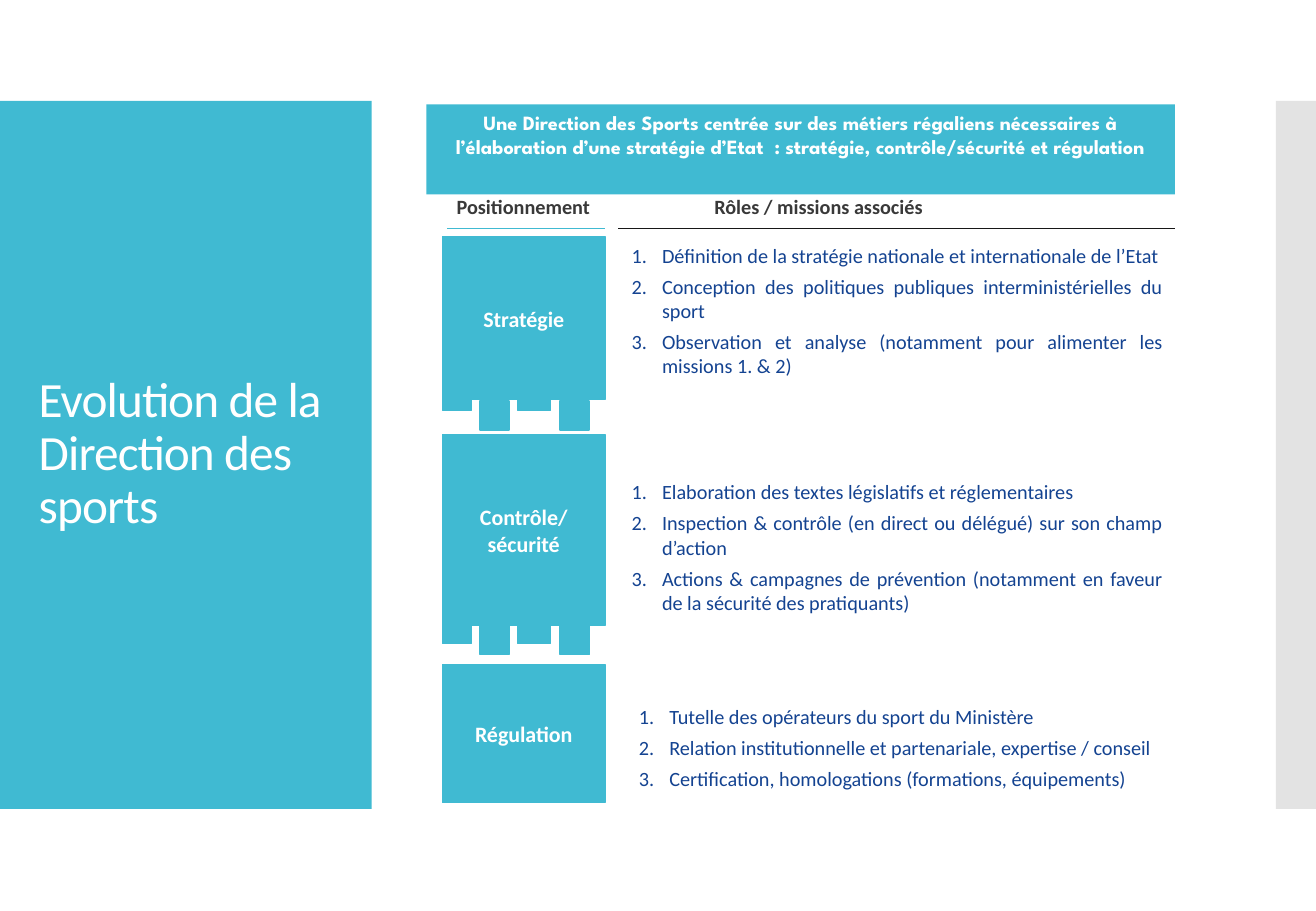
from dataclasses import dataclass

import pptx
import pptx.dml.color
import pptx.enum.shapes
import pptx.enum.text
import pptx.oxml.ns
import pptx.util
from lxml import etree

Inches = pptx.util.Inches
Pt = pptx.util.Pt
RGB = pptx.dml.color.RGBColor
ALIGN = pptx.enum.text.PP_ALIGN
ANCHOR = pptx.enum.text.MSO_ANCHOR
RECT = pptx.enum.shapes.MSO_SHAPE.RECTANGLE
STRAIGHT = pptx.enum.shapes.MSO_CONNECTOR.STRAIGHT
qn = pptx.oxml.ns.qn

TEAL = RGB(0x40, 0xBA, 0xD2)
GREY = RGB(0xC8, 0xC8, 0xC8)
WHITE = RGB(0xFF, 0xFF, 0xFF)
BLACK = RGB(0x17, 0x17, 0x17)
DARK = RGB(0x39, 0x39, 0x39)
NAVY = RGB(0x14, 0x43, 0x91)

BOX_X = 3.64
BOX_W = 1.34
RULE_Y = 1.88


@dataclass
class Role:
    name: str
    top: float
    height: float
    list_x: float
    list_y: float
    list_h: float
    tasks: str


@dataclass
class Tooth:
    x: float
    width: float
    low: bool


@dataclass
class Joint:
    high_y: float
    low_y: float
    low_line: float


ROLES = [
    Role("Stratégie", 1.95, 1.34, 5.1, 1.95, 1.22,
         "Définition de la stratégie nationale et internationale de l’Etat\n"
         "Conception des politiques publiques interministérielles du sport\n"
         "Observation et analyse (notamment pour alimenter les missions 1. & 2)"),
    Role("Contrôle/\nsécurité", 3.58, 1.57, 5.1, 3.9, 1.22,
         "Elaboration des textes législatifs et réglementaires\n"
         "Inspection & contrôle (en direct ou délégué) sur son champ d’action\n"
         "Actions & campagnes de prévention (notamment en faveur de la sécurité "
         "des pratiquants)"),
    Role("Régulation", 5.47, 1.14, 5.16, 5.75, 0.82,
         "Tutelle des opérateurs du sport du Ministère\n"
         "Relation institutionnelle et partenariale, expertise / conseil\n"
         "Certification, homologations (formations, équipements)"),
]
TEETH = [Tooth(3.64, 0.24, False), Tooth(3.95, 0.24, True),
         Tooth(4.26, 0.27, False), Tooth(4.61, 0.24, True)]
JOINTS = [Joint(3.14, 3.3, 1), Joint(5.06, 5.15, 0.75)]

deck = pptx.Presentation()
deck.slide_width = Inches(10.83)
deck.slide_height = Inches(7.5)
slide = deck.slides.add_slide(deck.slide_layouts[6])
shapes = slide.shapes


def add_rect(x: float, y: float, w: float, h: float, color: RGB = TEAL,
             line: float = 0):
    box = shapes.add_shape(RECT, Inches(x), Inches(y), Inches(w), Inches(h))
    box.shadow.inherit = False
    box.fill.solid()
    box.fill.fore_color.rgb = color
    if line:
        box.line.color.rgb = color
        box.line.width = Pt(line)
    else:
        box.line.fill.background()
    return box


def add_box(x: float, y: float, w: float, h: float):
    return shapes.add_textbox(Inches(x), Inches(y), Inches(w), Inches(h))


def add_rule(x: float, end: float, color: RGB) -> None:
    rule = shapes.add_connector(STRAIGHT, Inches(x), Inches(RULE_Y),
                                Inches(end), Inches(RULE_Y))
    rule.line.color.rgb = color
    rule.line.width = Pt(0.75)
    etree.SubElement(rule._element.spPr, qn("a:effectLst"))


def write(box, text: str, *, size: float = 12, font: str = "Calibri",
          color: RGB = WHITE, bold: bool = False, align=ALIGN.LEFT,
          anchor=ANCHOR.TOP, after: float = 0, lines: float = 1,
          track: float = 0, side: float = 0.1, count: bool = False) -> None:
    frame = box.text_frame
    frame.word_wrap = True
    frame.vertical_anchor = anchor
    frame.margin_left = frame.margin_right = Inches(side)
    frame.text = text
    for para in frame.paragraphs:
        para.alignment = align
        para.space_after = Pt(after)
        para.line_spacing = lines
        if count:
            props = para._p.get_or_add_pPr()
            props.set("marL", str(Inches(0.25)))
            props.set("indent", str(-Inches(0.25)))
            etree.SubElement(props, qn("a:buFont"), typeface="+mj-lt")
            etree.SubElement(props, qn("a:buAutoNum"), type="arabicPeriod")
        for run in para.runs:
            run.font.size = Pt(size)
            run.font.name = font
            run.font.bold = bold
            run.font.color.rgb = color
            if track:
                run._r.get_or_add_rPr().set("spc", str(round(track * 100)))


# Side panels and title
add_rect(0, 0.83, 3.06, 5.83)
edge = add_rect(10.5, 0.83, 0.33, 5.83, GREY)
tint = edge._element.spPr.find(qn("a:solidFill"))[0]
etree.SubElement(tint, qn("a:alpha"), val="50000")
write(add_box(0.22, 1.23, 2.62, 5.03), "Evolution de la Direction des sports",
      size=29.2, anchor=ANCHOR.MIDDLE, lines=0.9, track=-0.5)

# Banner
write(add_rect(3.51, 0.86, 6.16, 0.74),
      "Une Direction des Sports centrée sur des métiers régaliens nécessaires à "
      "l’élaboration d’une stratégie d’Etat  : stratégie, contrôle/sécurité "
      "et régulation",
      font="League Spartan", bold=True, align=ALIGN.CENTER, after=6)

# Teeth between the boxes
for joint in JOINTS:
    for tooth in TEETH:
        y = joint.low_y if tooth.low else joint.high_y
        add_rect(tooth.x, y, tooth.width, 0.24,
                 line=joint.low_line if tooth.low else 0.75)

# Column heads
add_rule(3.68, 4.98, TEAL)
add_rule(5.09, 9.67, BLACK)
write(add_box(3.66, 1.55, 1.34, 0.28), "Positionnement", color=DARK, bold=True)
write(add_box(5.78, 1.55, 2.05, 0.28), "Rôles / missions associés",
      color=DARK, bold=True)

# Roles with their tasks
for role in ROLES:
    write(add_rect(BOX_X, role.top, BOX_W, role.height, line=0.75), role.name,
          size=13, bold=True, align=ALIGN.CENTER, anchor=ANCHOR.MIDDLE, side=0.04)
    write(add_box(role.list_x, role.list_y, 4.57, role.list_h), role.tasks,
          color=NAVY, align=ALIGN.JUSTIFY, after=4, count=True)

deck.save("out.pptx")
